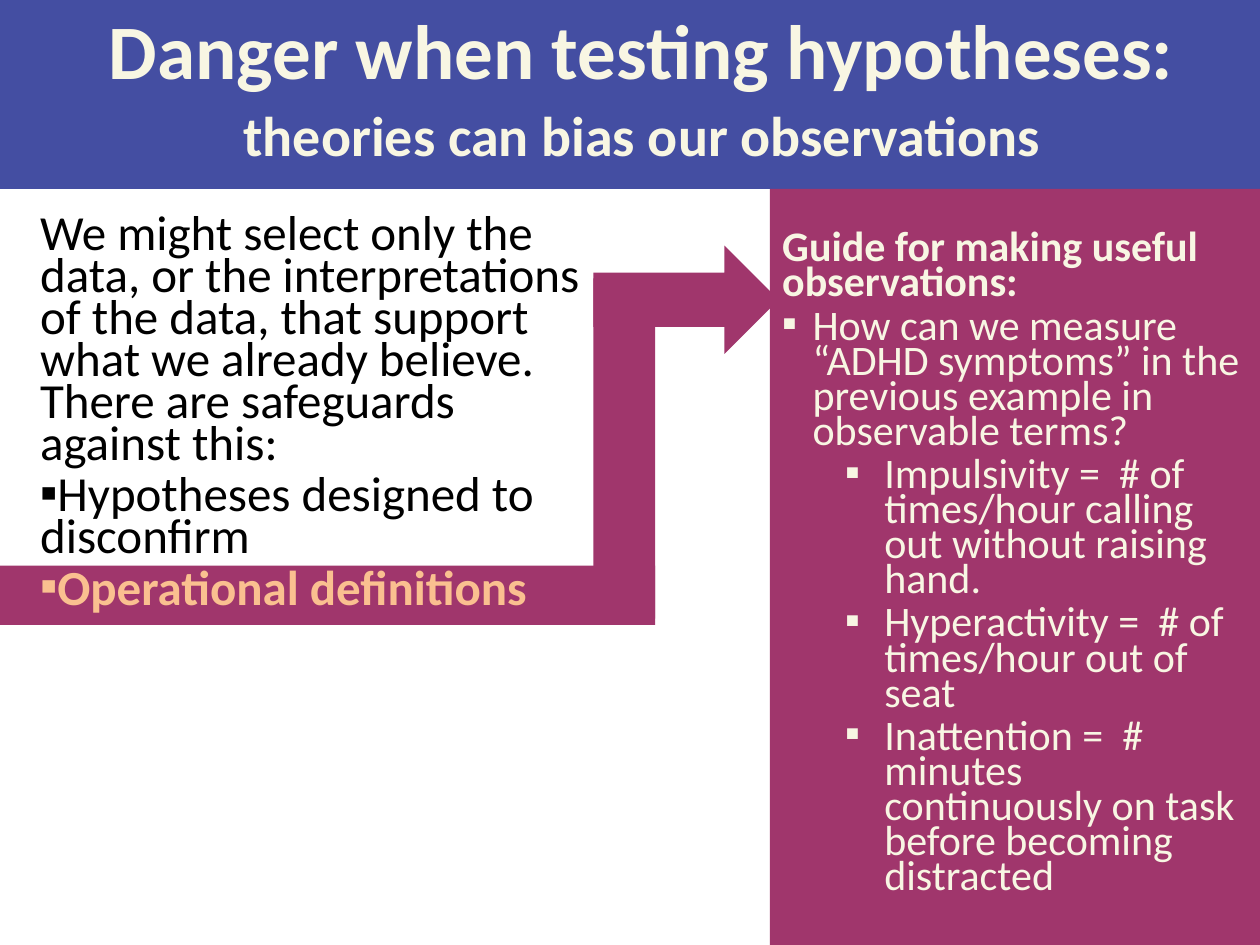
from lxml import etree
from pptx import Presentation
from pptx.dml.color import RGBColor
from pptx.enum.shapes import MSO_SHAPE as Shape
from pptx.enum.text import MSO_ANCHOR as Anchor, PP_ALIGN as Align
from pptx.oxml.ns import qn
from pptx.util import Inches, Pt

COLORS = {
    "banner": "444EA2",
    "plum": "A0366C",
    "cream": "F8F6E3",
    "black": "000000",
    "peach": "FAC090",
}
FONT = "Calibri"
MEASURES = [
    "Impulsivity =  # of times/hour calling out without raising hand.",
    "Hyperactivity =  # of times/hour out of seat",
    "Inattention =  # minutes continuously on task before becoming distracted",
]


def rgb(name):
    return RGBColor.from_string(COLORS[name])


def add_block(slide, preset, box, color):
    block = slide.shapes.add_shape(preset, *map(Inches, box))
    block.shadow.inherit = False
    block.fill.solid()
    block.fill.fore_color.rgb = rgb(color)
    block.line.fill.background()
    return block


def set_bullet(paragraph, margin, hang):
    properties = paragraph._p.get_or_add_pPr()
    properties.set("marL", str(Inches(margin)))
    properties.set("indent", str(-Inches(hang)))
    etree.SubElement(properties, qn("a:buFont")).set("typeface", FONT)
    etree.SubElement(properties, qn("a:buChar")).set("char", "▪")


def add_paragraph(frame, text, size, color, leading, bold=False, before=0.0,
                  align=Align.LEFT, bullet=None, level=0):
    first = frame.paragraphs[0]
    paragraph = frame.add_paragraph() if first.runs else first
    paragraph.alignment = align
    paragraph.level = level
    paragraph.line_spacing = Pt(leading)
    paragraph.space_before = Pt(size * before)
    if bullet:
        set_bullet(paragraph, *bullet)
    run = paragraph.add_run()
    run.text = text
    run.font.name = FONT
    run.font.size = Pt(size)
    run.font.bold = bold
    run.font.color.rgb = rgb(color)


def add_banner(slide):
    banner = add_block(slide, Shape.RECTANGLE, (-0.01, 0, 10.01, 1.5), "banner")
    frame = banner.text_frame
    frame.word_wrap = True
    frame.vertical_anchor = Anchor.MIDDLE
    frame.margin_left = Inches(0.3)
    for text, size in (("Danger when testing hypotheses:", 44),
                       ("theories can bias our observations", 32)):
        add_paragraph(frame, text, size, "cream", 42, bold=True, align=Align.CENTER)


def add_safeguards(slide):
    safeguards = slide.shapes.add_textbox(*map(Inches, (0.22, 1.68, 4.49, 4.7)))
    frame = safeguards.text_frame
    frame.word_wrap = True
    style = dict(size=28, leading=24, before=0.2)
    add_paragraph(frame, "We might select only the data, or the interpretations of the "
                  "data, that support what we already believe.  There are safeguards "
                  "against this:", color="black", **style)
    add_paragraph(frame, "Hypotheses designed to disconfirm", color="black",
                  bullet=(0, 0), **style)
    add_paragraph(frame, "Operational definitions", color="peach", bold=True,
                  bullet=(0, 0), **style)


def add_guide(slide):
    guide = add_block(slide, Shape.RECTANGLE, (6.11, 1.5, 3.89, 6), "plum")
    frame = guide.text_frame
    frame.word_wrap = True
    frame.vertical_anchor = Anchor.MIDDLE
    style = dict(size=24, color="cream", leading=20, before=0.2)
    add_paragraph(frame, "Guide for making useful observations:", bold=True, **style)
    add_paragraph(frame, "How can we measure “ADHD symptoms” in the previous example "
                  "in observable terms?", bullet=(0.24, 0.24), **style)
    for measure in MEASURES:
        add_paragraph(frame, measure, bullet=(0.81, 0.31), level=1, **style)


def main():
    deck = Presentation()
    deck.slide_width, deck.slide_height = Inches(10), Inches(7.5)
    slide = deck.slides.add_slide(deck.slide_layouts[6])
    add_block(slide, Shape.RECTANGLE, (0, 4.49, 5.2, 0.47), "plum")
    add_banner(slide)
    add_safeguards(slide)
    add_block(slide, Shape.RECTANGLE, (4.71, 2.21, 0.49, 2.7), "plum")
    add_block(slide, Shape.RIGHT_ARROW, (4.71, 1.95, 1.47, 0.86), "plum")
    add_guide(slide)
    deck.save("out.pptx")


if __name__ == "__main__":
    main()
